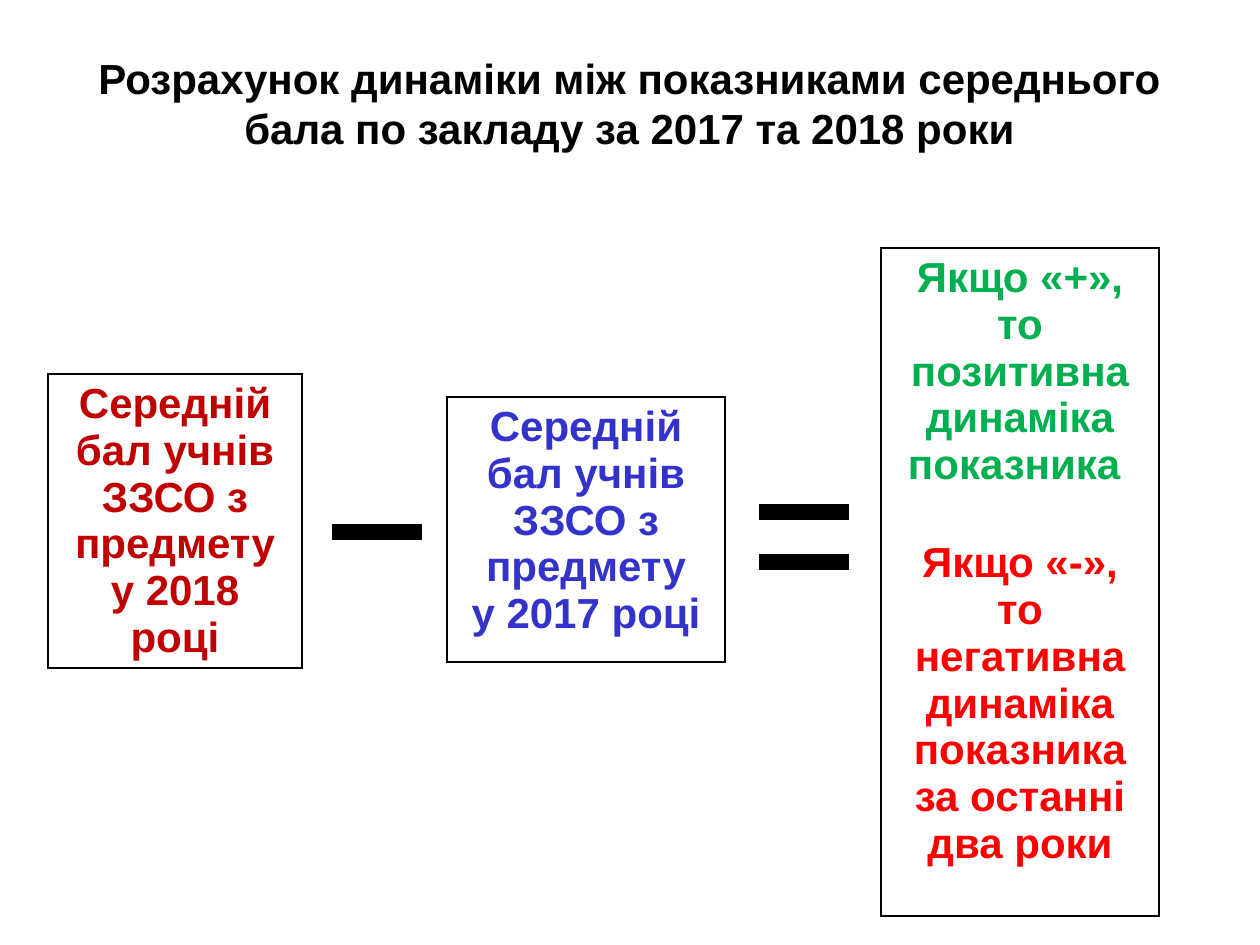
import pptx
import pptx.util
import pptx.dml.color
import pptx.enum.shapes
import pptx.enum.text
import pptx.oxml
import pptx.oxml.ns
from lxml import etree

RGB = pptx.dml.color.RGBColor
Pt = pptx.util.Pt
qn = pptx.oxml.ns.qn

BLACK = RGB(0x00, 0x00, 0x00)
WHITE = RGB(0xFF, 0xFF, 0xFF)
DARK_RED = RGB(0xC0, 0x00, 0x00)
BLUE = RGB(0x33, 0x33, 0xCC)
GREEN = RGB(0x00, 0xB0, 0x50)
RED = RGB(0xFF, 0x00, 0x00)

TITLE = "Розрахунок динаміки між показниками середнього бала по закладу за 2017 та 2018 роки"
AVERAGE = "Середній бал учнів ЗЗСО з предмету"
BOXES = [
    ((48, 374, 254, 265), 0, [(AVERAGE, DARK_RED), ("у 2018 році", DARK_RED)]),
    ((447, 397, 278, 265), 0, [(AVERAGE, BLUE), ("у 2017 році", BLUE)]),
    ((881, 248, 278, 668), 29, [
        ("Якщо «+», то позитивна динаміка показника ", GREEN),
        ("Якщо «-», то негативна динаміка показника за останні два роки", RED),
    ]),
]
SIGN_W = 90
SIGNS = [(332, 532), (759, 562), (759, 512)]


def px(n):
    return pptx.util.Emu(n * 914400 // 126)


def write(p, text, color, spacing):
    p.alignment = pptx.enum.text.PP_ALIGN.CENTER
    p.line_spacing = Pt(spacing)
    r = p.add_run()
    r.text = text
    r.font.name = "Arial"
    r.font.size = Pt(24)
    r.font.bold = True
    r.font.color.rgb = color


def add_borders(cell):
    tcPr = cell._tc.get_or_add_tcPr()
    for i, side in enumerate(("a:lnL", "a:lnR", "a:lnT", "a:lnB")):
        ln = etree.Element(qn(side), w=str(Pt(1)))
        fill = etree.SubElement(ln, qn("a:solidFill"))
        etree.SubElement(fill, qn("a:srgbClr"), val=str(BLACK))
        tcPr.insert(i, ln)


def add_box(s, place, gap, paragraphs):
    table = s.shapes.add_table(1, 1, *map(px, place)).table
    table.first_row = table.horz_banding = False
    cell = table.cell(0, 0)
    cell.fill.solid()
    cell.fill.fore_color.rgb = WHITE
    add_borders(cell)
    tf = cell.text_frame
    for i, (text, color) in enumerate(paragraphs):
        p = tf.add_paragraph() if i else tf.paragraphs[0]
        write(p, text, color, 26.8)
        if i:
            p.space_before = Pt(gap)


def add_sign(s, x, y):
    line = s.shapes.add_connector(
        pptx.enum.shapes.MSO_CONNECTOR.STRAIGHT, px(x), px(y), px(x + SIGN_W), px(y))
    line.line.color.rgb = BLACK
    line.line.width = Pt(9)
    etree.SubElement(line._element.spPr, qn("a:effectLst"))


def main():
    prs = pptx.Presentation()
    prs.slide_width, prs.slide_height = px(1260), px(945)
    s = prs.slides.add_slide(prs.slide_layouts[5])
    title = s.shapes.title
    title.left, title.top, title.width, title.height = map(px, (44, 45, 1171, 115))
    tf = title.text_frame
    tf.word_wrap = True
    tf.vertical_anchor = pptx.enum.text.MSO_ANCHOR.MIDDLE
    write(tf.paragraphs[0], TITLE, BLACK, 28.6)
    for place, gap, paragraphs in BOXES:
        add_box(s, place, gap, paragraphs)
    for x, y in SIGNS:
        add_sign(s, x, y)
    prs.save("out.pptx")


if __name__ == "__main__":
    main()
